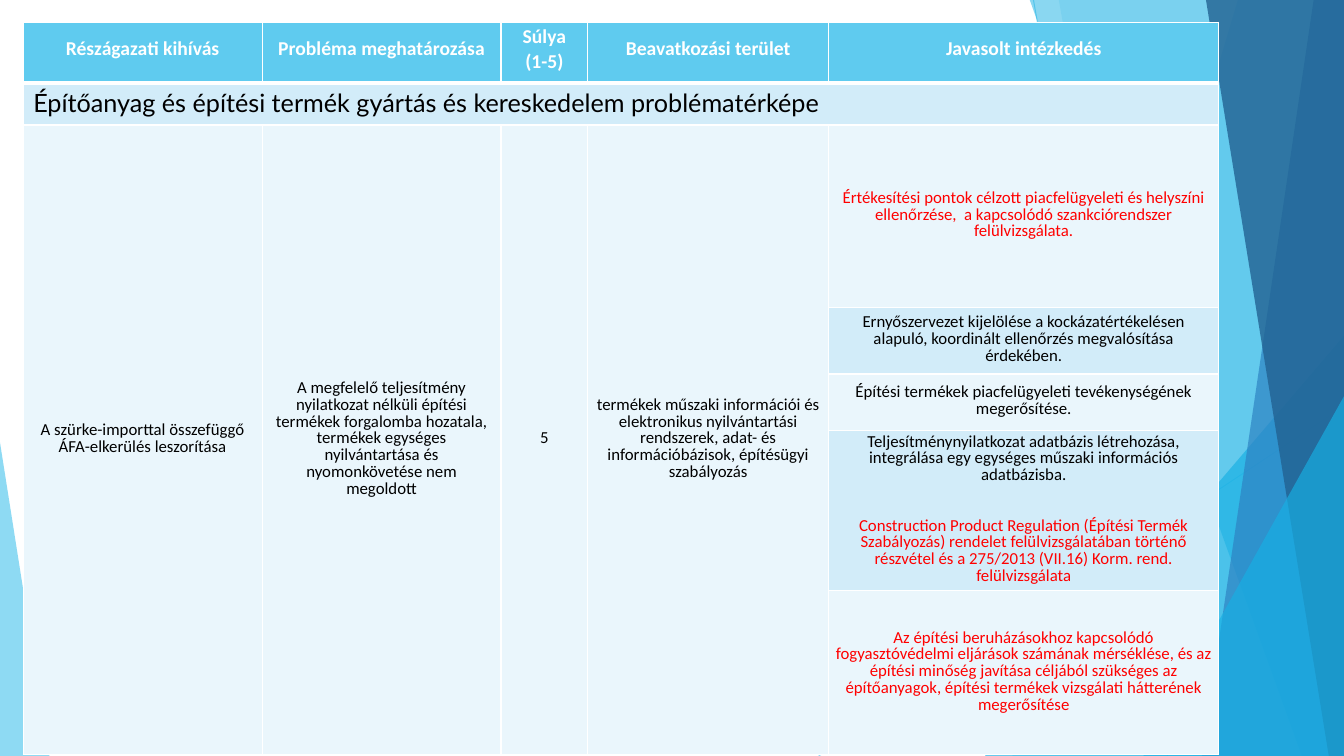
import pptx
import pptx.dml.color
import pptx.enum.shapes
import pptx.enum.text
import pptx.oxml
import pptx.oxml.ns
import pptx.util
from pptx.util import Inches

# Content
HEADERS = [["Részágazati kihívás"], ["Probléma meghatározása"], ["Súlya", "(1-5)"],
           ["Beavatkozási terület"], ["Javasolt intézkedés"]]
SECTION = "Építőanyag és építési termék gyártás és kereskedelem problématérképe"
PROBLEM = [
    "A szürke-importtal összefüggő ÁFA-elkerülés leszorítása",
    "A megfelelő teljesítmény nyilatkozat nélküli építési termékek forgalomba hozatala, "
    "termékek egységes nyilvántartása és nyomonkövetése nem megoldott",
    "5",
    "termékek műszaki információi és elektronikus nyilvántartási rendszerek, "
    "adat- és információbázisok, építésügyi szabályozás",
]
BLACK, RED, WHITE = "000000", "FF0000", "FFFFFF"
MEASURES = [  # paragraphs of each cell: (text, colour)
    [("Értékesítési pontok célzott piacfelügyeleti és helyszíni ellenőrzése,  "
      "a kapcsolódó szankciórendszer felülvizsgálata.", RED)],
    [("Ernyőszervezet kijelölése a kockázatértékelésen alapuló, koordinált ellenőrzés "
      "megvalósítása érdekében.", BLACK)],
    [("Építési termékek piacfelügyeleti tevékenységének megerősítése.", BLACK)],
    [("Teljesítménynyilatkozat adatbázis létrehozása, integrálása egy egységes műszaki "
      "információs adatbázisba.", BLACK),
     ("Construction Product Regulation (Építési Termék Szabályozás) rendelet "
      "felülvizsgálatában történő részvétel és a 275/2013 (VII.16) Korm. rend. "
      "felülvizsgálata", RED)],
    [("Az építési beruházásokhoz kapcsolódó fogyasztóvédelmi eljárások számának mérséklése, "
      "és az építési minőség javítása céljából szükséges az építőanyagok, építési termékek "
      "vizsgálati hátterének megerősítése", RED)],
]
COLUMN_WIDTHS = [2.37, 2.37, 0.86, 2.39, 3.87]
ROW_HEIGHTS = [0.6, 0.42, 1.81, 0.66, 0.56, 1.59, 1.63]
HEADER_FILL, BANDS = "5FCBEF", ["D2ECF9", "EAF6FC"]

# Background decoration, from back to front
TOP, BOTTOM, RIGHT = -0.01, 7.5, 13.33
LINES = [((10.25, 0), (11.58, BOTTOM)), ((RIGHT, 4.03), (8.12, BOTTOM))]
PANELS = [  # kind, geometry, colour, opacity in percent
    ("band", (12.28, 10.04), "5FCBEF", 36),
    ("band", (10.5, 11.83), "5FCBEF", 20),
    ("triangle", (9.77, 3.33, 3.56, 4.17, 1), "17B0E4", 66),
    ("band", (10.21, 12.91), "17B0E4", 50),
    ("band", (13.03, 11.92), "2E83C3", 70),
    ("band", (11.96, 13.18), "226292", 80),
    ("triangle", (11.34, 3.93, 1.99, 3.57, 1), "17B0E4", 66),
    ("triangle", (0, 4.39, 0.49, 3.11, 0), "5FCBEF", 70),
]


def color(value):
    return pptx.dml.color.RGBColor.from_string(value)


def set_opacity(element, percent):
    for color_element in element.iter(pptx.oxml.ns.qn("a:srgbClr")):
        alpha = pptx.oxml.parse_xml(
            f'<a:alpha {pptx.oxml.ns.nsdecls("a")} val="{percent * 1000}"/>')
        color_element.append(alpha)


def add_line(slide, start, end):
    line = slide.shapes.add_connector(pptx.enum.shapes.MSO_CONNECTOR.STRAIGHT,
                                      *(Inches(v) for v in start + end))
    line.line.color.rgb = color("5FCBEF")
    line.line.width = pptx.util.Pt(0.75)
    properties = line._element.spPr
    set_opacity(properties, 70)
    properties.append(pptx.oxml.parse_xml(f'<a:effectLst {pptx.oxml.ns.nsdecls("a")}/>'))


def add_panel(slide, kind, geometry, fill, opacity):
    if kind == "band":
        top_left, bottom_left = geometry
        corners = [(top_left, TOP), (RIGHT, TOP), (RIGHT, BOTTOM), (bottom_left, BOTTOM)]
        points = [(Inches(x), Inches(y)) for x, y in corners]
        builder = slide.shapes.build_freeform(*points[0])
        builder.add_line_segments(points[1:], close=True)
        shape = builder.convert_to_shape()
    else:
        *box, apex = geometry
        shape = slide.shapes.add_shape(pptx.enum.shapes.MSO_SHAPE.ISOSCELES_TRIANGLE,
                                       *(Inches(v) for v in box))
        shape.adjustments[0] = apex
    shape.shadow.inherit = False
    shape.line.fill.background()
    shape.fill.solid()
    shape.fill.fore_color.rgb = color(fill)
    set_opacity(shape._element.spPr, opacity)


def write(paragraph, text, size=12, font="Calibri", fill=BLACK, bold=False,
          compact=True, before=3):
    run = paragraph.add_run()
    run.text = text
    run.font.size = pptx.util.Pt(size)
    run.font.name = font
    run.font.bold = bold
    run.font.color.rgb = color(fill)
    if compact:
        paragraph.alignment = pptx.enum.text.PP_ALIGN.CENTER
        paragraph.line_spacing = pptx.util.Pt(12)
        paragraph.space_before = pptx.util.Pt(before)
        paragraph.space_after = pptx.util.Pt(3)


def fill_cell(cell, paragraphs, **style):
    cell.vertical_anchor = pptx.enum.text.MSO_ANCHOR.MIDDLE
    cell.margin_left = cell.margin_right = Inches(0.07)
    cell.margin_top = cell.margin_bottom = 0
    for index, (text, text_color) in enumerate(paragraphs):
        frame = cell.text_frame
        paragraph = frame.add_paragraph() if index else frame.paragraphs[0]
        gap = 21 if index and text_color == RED else 3
        write(paragraph, text, fill=text_color, before=gap, **style)


def style_cell(cell, fill, bottom=1, top=1):
    properties = cell._tc.get_or_add_tcPr()
    for side, width in (("L", 1), ("R", 1), ("T", top), ("B", bottom)):
        properties.append(pptx.oxml.parse_xml(
            f'<a:ln{side} {pptx.oxml.ns.nsdecls("a")} w="{width * 12700}"><a:solidFill>'
            f'<a:srgbClr val="{WHITE}"/></a:solidFill></a:ln{side}>'))
    cell.fill.solid()
    cell.fill.fore_color.rgb = color(fill)


def add_problem_table(slide):
    table = slide.shapes.add_table(
        len(ROW_HEIGHTS), len(COLUMN_WIDTHS), Inches(0.23), Inches(0.22),
        Inches(sum(COLUMN_WIDTHS)), Inches(sum(ROW_HEIGHTS))).table
    table.horz_banding = False
    for column, width in zip(table.columns, COLUMN_WIDTHS):
        column.width = Inches(width)
    for row, height in zip(table.rows, ROW_HEIGHTS):
        row.height = Inches(height)

    # Fills and borders: header, then alternating bands
    last_column = len(COLUMN_WIDTHS) - 1
    for r in range(len(ROW_HEIGHTS)):
        for c in range(len(COLUMN_WIDTHS)):
            band = BANDS[(r - 1) % 2] if c == last_column or r < 2 else BANDS[1]
            style_cell(table.cell(r, c), HEADER_FILL if r == 0 else band,
                       bottom=3 if r == 0 else 1, top=3 if r == 1 else 1)

    # Text
    for c, lines in enumerate(HEADERS):
        fill_cell(table.cell(0, c), [(line, WHITE) for line in lines], size=14, bold=True)
    section = table.cell(1, 0)
    section.merge(table.cell(1, last_column))
    write(section.text_frame.paragraphs[0], SECTION, size=18, font="Lato", compact=False)
    for c, text in enumerate(PROBLEM):
        table.cell(2, c).merge(table.cell(len(ROW_HEIGHTS) - 1, c))
        fill_cell(table.cell(2, c), [(text, BLACK)])
    for r, paragraphs in enumerate(MEASURES, start=2):
        fill_cell(table.cell(r, last_column), paragraphs)


def main():
    presentation = pptx.Presentation()
    presentation.slide_width = Inches(13.33)
    presentation.slide_height = Inches(7.5)
    slide = presentation.slides.add_slide(presentation.slide_layouts[6])
    for start, end in LINES:
        add_line(slide, start, end)
    for panel in PANELS:
        add_panel(slide, *panel)
    add_problem_table(slide)
    presentation.save("out.pptx")


if __name__ == "__main__":
    main()
